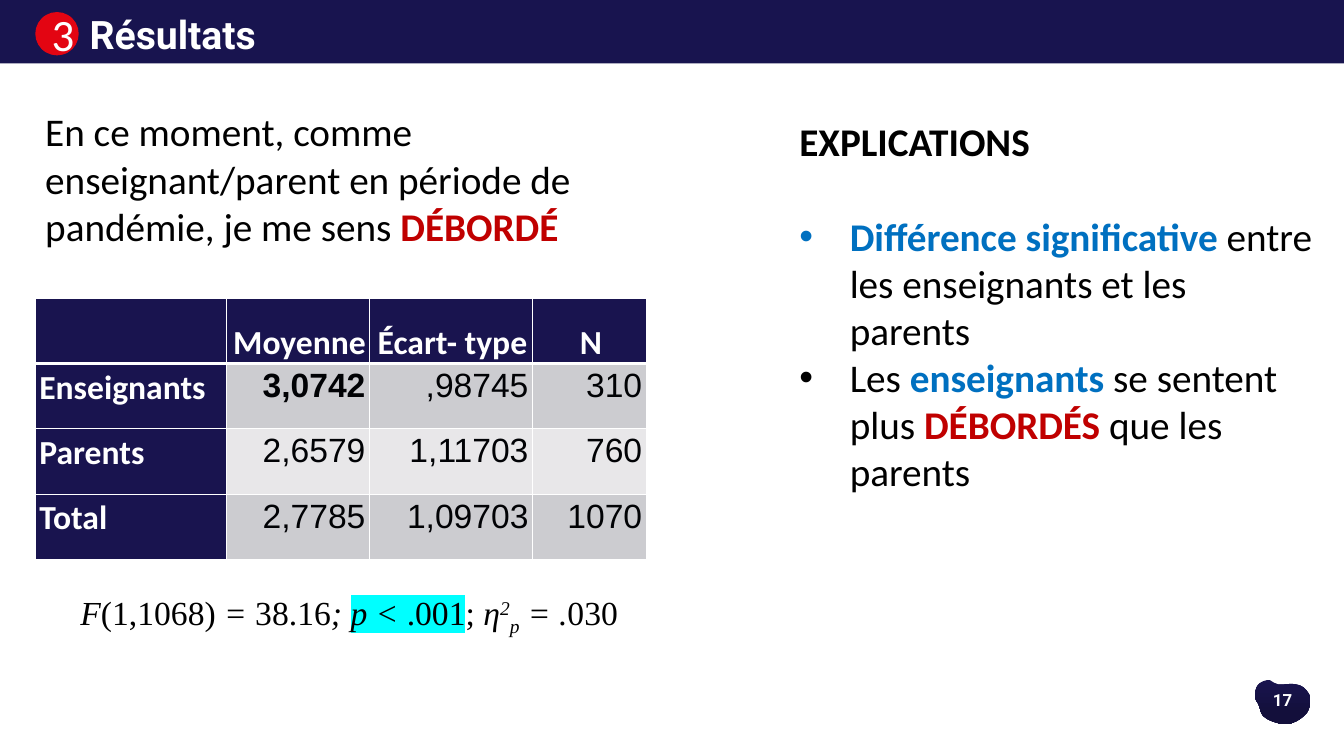
import pptx
import pptx.util
import pptx.dml.color
import pptx.enum.shapes
import pptx.enum.text
import pptx.oxml.ns
import lxml.etree

NAVY, WHITE, BLACK, RED, BLUE = "19144F", "FFFFFF", "000000", "C00000", "0070C0"
INK, STRIPES = "010205", ("CCCCD0", "E8E7E9")
ALIGN = pptx.enum.text.PP_ALIGN
ANCHOR = pptx.enum.text.MSO_ANCHOR
SHAPE = pptx.enum.shapes.MSO_SHAPE

ROWS = [
    ["", "Moyenne", "Écart- type", "N"],
    ["Enseignants", "3,0742", ",98745", "310"],
    ["Parents", "2,6579", "1,11703", "760"],
    ["Total", "2,7785", "1,09703", "1070"],
]
COLUMN_SHARES = [1.9, 1.42, 1.62, 1.13]
BADGE_START = (16, 80)
BADGE_CURVES = [
    [(11, 73), (11, 64), (9, 59)],
    [(9, 59), (9, 57), (7, 52)],
    [(7, 52), (0, 41), (2, 32)],
    [(2, 5), (16, 2), (21, 0)],
    [(28, -5), (30, 5), (42, 9)],
    [(54, 11), (79, 0), (91, 23)],
    [(104, 43), (96, 59), (93, 70)],
    [(88, 80), (77, 91), (68, 95)],
    [(60, 100), (47, 100), (39, 95)],
    [(30, 93), (21, 86), (16, 80)],
]


def colour(value):
    return pptx.dml.color.RGBColor.from_string(value)


def within(box, left, top, width, height):
    x, y, w, h = box
    return (int(x + w * left / 100), int(y + h * top / 100),
            int(w * width / 100), int(h * height / 100))


def element(parent, tag, **attributes):
    return lxml.etree.SubElement(parent, pptx.oxml.ns.qn(tag), attributes)


def add_run(paragraph, text, size, face, ink, bold=False, italic=False):
    run = paragraph.add_run()
    run.text = text
    font = run.font
    font.size = pptx.util.Pt(size)
    font.name = face
    font.bold = bold
    font.italic = italic
    font.color.rgb = colour(ink)
    return run


def text_frame(slide, box):
    frame = slide.shapes.add_textbox(*box).text_frame
    frame.word_wrap = True
    return frame


def add_solid(slide, kind, box, fill):
    solid = slide.shapes.add_shape(kind, *box)
    solid.shadow.inherit = False
    solid.fill.solid()
    solid.fill.fore_color.rgb = colour(fill)
    solid.line.fill.background()
    return solid


def add_header(slide, box):
    add_solid(slide, SHAPE.RECTANGLE, box, "18144F")
    section = add_solid(slide, SHAPE.OVAL, within(box, 2.63, 19, 3.23, 68.25), "E30512")
    section.text_frame.vertical_anchor = ANCHOR.MIDDLE
    number = section.text_frame.paragraphs[0]
    number.alignment = ALIGN.CENTER
    add_run(number, "3", 32, "Calibri", WHITE)
    title = text_frame(slide, within(box, 5.93, 8, 76, 90))
    add_run(title.paragraphs[0], "Résultats", 28, "Roboto", WHITE, bold=True)


def add_statement(slide, box):
    statement = text_frame(slide, box).paragraphs[0]
    add_run(statement, "En ce moment, comme enseignant/parent en période de "
            "pandémie, je me sens", 28, "Calibri", BLACK)
    add_run(statement, " DÉBORDÉ", 28, "Calibri", RED, bold=True)


def add_borders(cell, row):
    properties = cell._tc.get_or_add_tcPr()
    thick = {"a:lnB": 0, "a:lnT": 1}
    for side in ("a:lnL", "a:lnR", "a:lnT", "a:lnB"):
        points = 3 if thick.get(side) == row else 1
        line = element(properties, side, w=str(pptx.util.Pt(points)))
        element(element(line, "a:solidFill"), "a:srgbClr", val=WHITE)


def add_scores(slide, box):
    table = slide.shapes.add_table(len(ROWS), len(COLUMN_SHARES), *box).table
    for column, share in zip(table.columns, COLUMN_SHARES):
        column.width = int(box[2] * share / sum(COLUMN_SHARES))
    for r, values in enumerate(ROWS):
        for c, value in enumerate(values):
            cell = table.cell(r, c)
            heading = r == 0 or c == 0
            add_borders(cell, r)
            cell.fill.solid()
            cell.fill.fore_color.rgb = colour(NAVY if heading else STRIPES[(r - 1) % 2])
            cell.margin_left = pptx.util.Inches(0.04)
            cell.margin_right = pptx.util.Inches(0.01 if r == 0 else 0.04)
            cell.margin_top = pptx.util.Inches(0.01)
            cell.margin_bottom = 0
            cell.vertical_anchor = ANCHOR.BOTTOM if r == 0 else ANCHOR.TOP
            paragraph = cell.text_frame.paragraphs[0]
            paragraph.line_spacing = 1.07
            paragraph.space_after = pptx.util.Pt(0.8)
            paragraph.alignment = (ALIGN.CENTER if r == 0 else
                                   ALIGN.LEFT if c == 0 else ALIGN.RIGHT)
            if value:
                add_run(paragraph, value, 24, "Calibri" if heading else "Arial",
                        WHITE if heading else INK, bold=heading or (r, c) == (1, 1))


def add_explanations(slide, box):
    frame = text_frame(slide, box)
    heading = frame.paragraphs[0]
    heading.space_after = pptx.util.Pt(34)
    add_run(heading, "EXPLICATIONS", 28, "Calibri", BLACK, bold=True)
    findings = [
        [("Différence significative ", BLUE), ("entre les enseignants et les parents", BLACK)],
        [("Les ", BLACK), ("enseignants", BLUE), (" se sentent plus", BLACK),
         (" DÉBORDÉS ", RED), ("que les parents", BLACK)],
    ]
    hanging = pptx.util.Inches(0.5)
    for finding in findings:
        paragraph = frame.add_paragraph()
        properties = paragraph._p.get_or_add_pPr()
        properties.set("marL", str(hanging))
        properties.set("indent", str(-hanging))
        element(properties, "a:buFont", typeface="Arial")
        element(properties, "a:buChar", char="•")
        for text, ink in finding:
            add_run(paragraph, text, 28, "Calibri", ink, bold=ink != BLACK)


def add_statistics(slide, box):
    formula = text_frame(slide, box).paragraphs[0]
    parts = [
        ("F", True), ("(1,1068) ", False), ("=", True), (" 38.16", False), ("; ", True),
        ("p < ", True), (".001", False), (";", False), (" η", True), ("2", True),
        ("p", True), (" = .", True), ("030", False),
    ]
    baselines = {"2": "30000", "p": "-25000"}
    for text, italic in parts:
        run = add_run(formula, text, 24, "Times New Roman", BLACK, italic=italic)
        properties = run.font._element
        if text in baselines:
            properties.set("baseline", baselines[text])
        if text in ("p < ", ".001"):
            highlight = element(properties, "a:highlight")
            element(highlight, "a:srgbClr", val="00FFFF")
            properties.find(pptx.oxml.ns.qn("a:solidFill")).addnext(highlight)


def curve_points(start, curves, steps=8):
    for first, second, end in curves:
        for step in range(1, steps + 1):
            t = step / steps
            yield tuple((1 - t) ** 3 * a + 3 * (1 - t) ** 2 * t * b
                        + 3 * (1 - t) * t ** 2 * c + t ** 3 * d
                        for a, b, c, d in zip(start, first, second, end))
        start = end


def add_page_number(slide, box):
    def spot(point):
        return within(box, *point, 0, 0)[:2]

    builder = slide.shapes.build_freeform(*spot(BADGE_START))
    builder.add_line_segments([spot(p) for p in curve_points(BADGE_START, BADGE_CURVES)])
    badge = builder.convert_to_shape()
    badge.shadow.inherit = False
    badge.line.fill.background()
    badge.fill.gradient()
    badge.fill.gradient_angle = 270
    for stop, position, ink in zip(badge.fill.gradient_stops, (0, 0.76), (NAVY, "130F3B")):
        stop.position = position
        stop.color.rgb = colour(ink)
    number = text_frame(slide, within(box, -10, 9, 119, 68)).paragraphs[0]
    number.alignment = ALIGN.CENTER
    add_run(number, "17", 12, "Roboto", WHITE, bold=True)


def main():
    deck = pptx.Presentation()
    deck.slide_width = pptx.util.Inches(13.33)
    deck.slide_height = pptx.util.Inches(7.5)
    slide = deck.slides.add_slide(deck.slide_layouts[6])
    page = (0, 0, deck.slide_width, deck.slide_height)
    add_page_number(slide, within(page, 93.3, 90, 4.3, 5.87))
    add_header(slide, within(page, 0, 0, 100, 8.4))
    add_scores(slide, within(page, 2.63, 39.47, 45.46, 34.53))
    add_statement(slide, within(page, 2.63, 13.6, 45.46, 24.27))
    add_explanations(slide, within(page, 58.74, 14.93, 39.83, 61.87))
    add_statistics(slide, within(page, 5.25, 77.6, 46.5, 7))
    deck.save("out.pptx")


if __name__ == "__main__":
    main()
